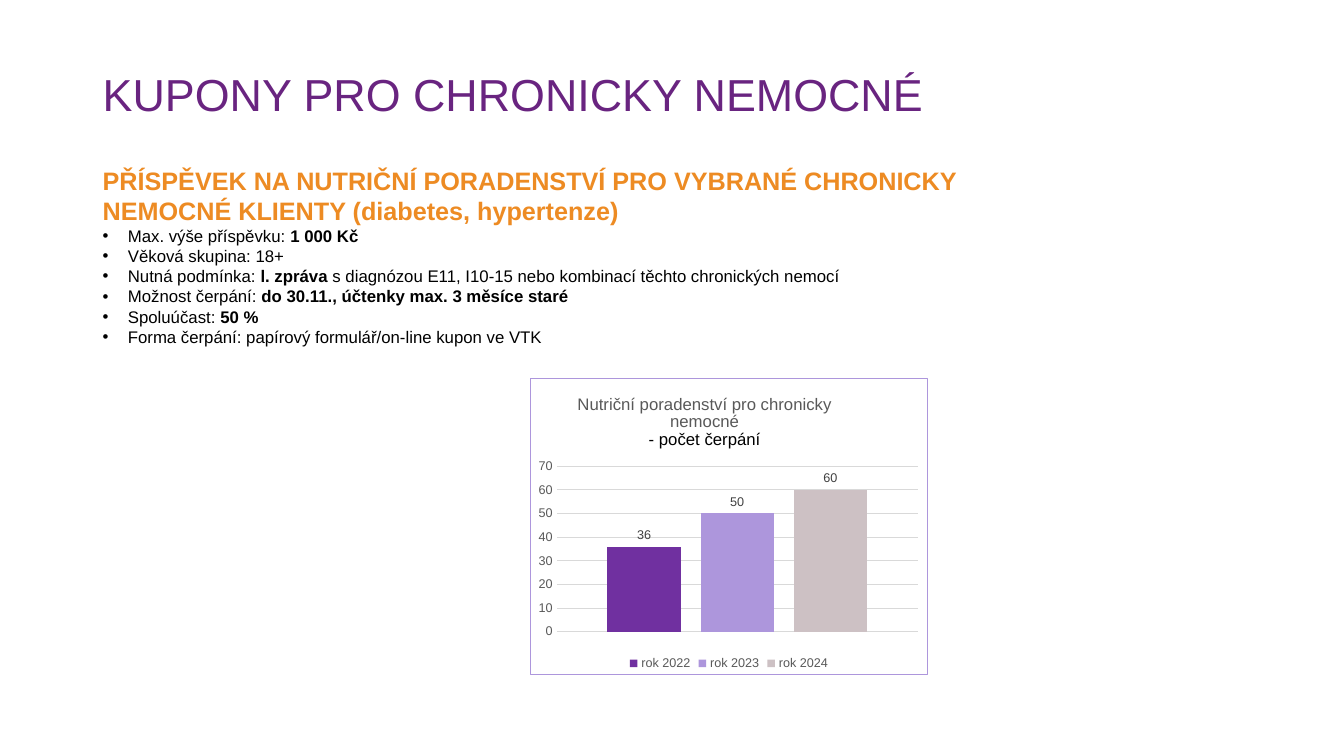
from lxml.etree import SubElement
from pptx import Presentation
from pptx.chart.data import CategoryChartData
from pptx.dml.color import RGBColor
from pptx.enum.chart import XL_CHART_TYPE, XL_LABEL_POSITION, XL_LEGEND_POSITION, XL_TICK_MARK
from pptx.enum.text import MSO_ANCHOR
from pptx.oxml import parse_xml
from pptx.oxml.ns import nsdecls, qn
from pptx.util import Inches, Pt

PURPLE = RGBColor(0x69, 0x24, 0x80)
ORANGE = RGBColor(0xED, 0x8B, 0x23)
BLACK = RGBColor(0, 0, 0)
GREY = RGBColor(0x59, 0x59, 0x59)
LABEL_GREY = RGBColor(0x40, 0x40, 0x40)
GRID_GREY = RGBColor(0xD9, 0xD9, 0xD9)
VIOLET = RGBColor(0x70, 0x30, 0xA0)
LAVENDER = RGBColor(0xAD, 0x96, 0xDC)
TAUPE = RGBColor(0xCD, 0xC1, 0xC4)

CONDITIONS = [
    ("Max. výše příspěvku: ", "1 000 Kč", ""),
    ("Věková skupina: 18+", "", ""),
    ("Nutná podmínka: ", "l. zpráva ",
     "s diagnózou E11, I10-15 nebo kombinací těchto chronických nemocí"),
    ("Možnost čerpání: ", "do 30.11., účtenky max. 3 měsíce staré", ""),
    ("Spoluúčast: ", "50 %", ""),
    ("Forma čerpání: papírový formulář/on-line kupon ve VTK", "", ""),
]
YEARS = [("rok 2022", 36, VIOLET), ("rok 2023", 50, LAVENDER), ("rok 2024", 60, TAUPE)]
CHART_TITLE = [("Nutriční poradenství pro chronicky nemocné", GREY), ("- počet čerpání", BLACK)]


class SlideBuilder:
    font_name = "Arial"

    def __init__(self, presentation):
        self.slide = presentation.slides.add_slide(presentation.slide_layouts[6])

    def style(self, font, size, color, bold=None):
        font.name = self.font_name
        font.size = Pt(size)
        font.color.rgb = color
        font.bold = bold

    def text_box(self, left, top, width, height, text, size, color, bold=False):
        shape = self.slide.shapes.add_textbox(
            Inches(left), Inches(top), Inches(width), Inches(height))
        frame = shape.text_frame
        frame.word_wrap = True
        paragraph = frame.paragraphs[0]
        paragraph.text = text
        self.style(paragraph.font, size, color, bold)
        return frame

    def bullet(self, frame, parts):
        paragraph = frame.add_paragraph()
        properties = paragraph._p.get_or_add_pPr()
        properties.set("marL", str(Inches(0.25)))
        properties.set("indent", str(-Inches(0.25)))
        SubElement(properties, qn("a:buFont")).set("typeface", self.font_name)
        SubElement(properties, qn("a:buChar")).set("char", "•")
        self.style(paragraph.font, 12, BLACK)
        for text, bold in zip(parts, (False, True, False)):
            if text:
                run = paragraph.add_run()
                run.text = text
                run.font.bold = bold

    def place(self, element, index, **fractions):
        for layout in element.findall(qn("c:layout")):
            element.remove(layout)
        layout = parse_xml(f'<c:layout {nsdecls("c")}><c:manualLayout/></c:layout>')
        settings = {"xMode": "edge", "yMode": "edge", **fractions}
        if "w" in fractions:
            settings = {"layoutTarget": "inner", **settings}
        for name, value in settings.items():
            SubElement(layout[0], qn(f"c:{name}")).set("val", str(value))
        element.insert(index, layout)

    def chart_frame(self, chart, fill, border):
        chart_space = chart._chartSpace
        chart_space.find(qn("c:chart")).addnext(parse_xml(
            f'<c:spPr {nsdecls("c", "a")}>'
            f'<a:solidFill><a:srgbClr val="{fill}"/></a:solidFill>'
            f'<a:ln w="{Pt(0.75)}"><a:solidFill><a:srgbClr val="{border}"/></a:solidFill></a:ln>'
            '</c:spPr>'))

    def chart_title(self, chart, lines):
        frame = chart.chart_title.text_frame
        for index, (text, color) in enumerate(lines):
            paragraph = frame.add_paragraph() if index else frame.paragraphs[0]
            run = paragraph.add_run()
            run.text = text
            self.style(paragraph.font, 12, color, False)
            self.style(run.font, 12, color, False)
        chart.chart_title.include_in_layout = False
        self.place(chart.chart_title._element, 1, x=0.11, y=0.04)

    def column_chart(self, left, top, width, height, title, years):
        data = CategoryChartData(number_format="#,##0")
        data.categories = ["1"]
        for name, value, _ in years:
            data.add_series(name, [value])
        chart = self.slide.shapes.add_chart(
            XL_CHART_TYPE.COLUMN_CLUSTERED, Inches(left), Inches(top),
            Inches(width), Inches(height), data).chart
        self.style(chart.font, 10, BLACK)
        self.chart_title(chart, title)
        self.chart_frame(chart, RGBColor(255, 255, 255), LAVENDER)

        chart.has_legend = True
        chart.legend.position = XL_LEGEND_POSITION.BOTTOM
        chart.legend.include_in_layout = False
        self.style(chart.legend.font, 9, GREY)

        chart.category_axis.visible = False
        axis = chart.value_axis
        axis.minimum_scale, axis.maximum_scale, axis.major_unit = 0, 70, 10
        axis.major_tick_mark = axis.minor_tick_mark = XL_TICK_MARK.NONE
        axis.format.line.fill.background()
        axis.major_gridlines.format.line.color.rgb = GRID_GREY
        axis.major_gridlines.format.line.width = Pt(0.75)
        self.style(axis.tick_labels.font, 9, GREY)

        plot = chart.plots[0]
        plot.gap_width, plot.overlap = 139, -27
        plot.vary_by_categories = False
        for series, (_, _, color) in zip(plot.series, years):
            series.format.fill.solid()
            series.format.fill.fore_color.rgb = color
            labels = series.data_labels
            labels.show_value = True
            labels.position = XL_LABEL_POSITION.OUTSIDE_END
            self.style(labels.font, 9, LABEL_GREY)
        plot_area = chart._chartSpace.find(qn("c:chart")).find(qn("c:plotArea"))
        self.place(plot_area, 0, x=0.065, y=0.296, w=0.912, h=0.559)


def main():
    presentation = Presentation()
    presentation.slide_width = Inches(13.33)
    presentation.slide_height = Inches(7.5)
    builder = SlideBuilder(presentation)

    body = builder.text_box(
        0.92, 1.59, 8.94, 5.35,
        "PŘÍSPĚVEK NA NUTRIČNÍ PORADENSTVÍ PRO VYBRANÉ CHRONICKY "
        "NEMOCNÉ KLIENTY (diabetes, hypertenze)", 18, ORANGE, True)
    for parts in CONDITIONS:
        builder.bullet(body, parts)

    heading = builder.text_box(
        0.92, 0.55, 9.81, 0.83, "KUPONY PRO CHRONICKY NEMOCNÉ", 32, PURPLE)
    heading.vertical_anchor = MSO_ANCHOR.MIDDLE
    heading.paragraphs[0].line_spacing = 0.9

    builder.column_chart(5.26, 3.75, 3.94, 2.95, CHART_TITLE, YEARS)
    presentation.save("out.pptx")


if __name__ == "__main__":
    main()
